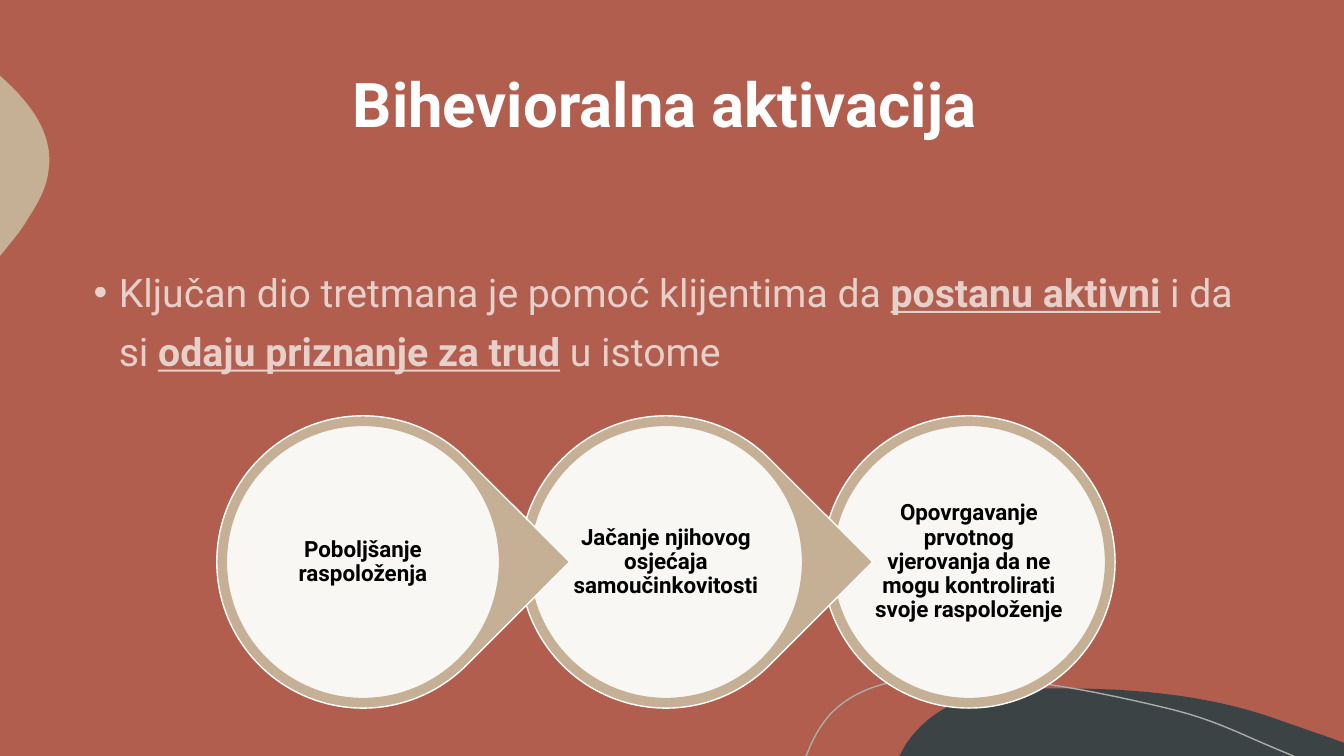
"""Build the behavioural activation slide with its chain of three outcomes."""
from dataclasses import dataclass

from lxml.etree import SubElement
from pptx import Presentation
from pptx.dml.color import RGBColor
from pptx.dml.fill import FillFormat
from pptx.enum.shapes import MSO_SHAPE as Preset
from pptx.enum.text import MSO_ANCHOR as Anchor, PP_ALIGN as Align
from pptx.oxml.ns import qn
from pptx.shapes.autoshape import Shape
from pptx.slide import Slide
from pptx.text.text import TextFrame, _Paragraph as Paragraph
from pptx.util import Inches, Pt

Point = tuple[float, float]

COLORS = {
    "clay": "B15E4E",
    "sand": "C5B096",
    "slate": "3B4345",
    "mist": "A9AEA7",
    "white": "FFFFFF",
    "black": "000000",
}
FONT = "Roboto"
RING_SIZE, DISC_SIZE, LABEL_SIZE = 2.9, 2.71, 1.94
FIRST_CENTER, LAST_CENTER = 3.6, 9.61
CENTER_Y = 4.22 + DISC_SIZE / 2


@dataclass(frozen=True)
class Outline:
    """A decorative outline whose segments hold one point or three Bezier points."""
    start: Point
    segments: list[tuple[Point, ...]]
    fill: str | None = None
    line: str | None = None


@dataclass(frozen=True)
class Outcome:
    """One link of the chain and the shape of its ring."""
    label: str
    ring: Preset
    rotation: float


@dataclass(frozen=True)
class Phrase:
    """A piece of the statement."""
    text: str
    stressed: bool = False


DECORATIONS = [
    Outline((10.54, 6.83), [
        ((11.28, 6.83), (12.04, 6.9), (12.73, 7.16)),
        ((12.86, 7.2), (12.98, 7.25), (13.11, 7.29)),
        ((13.33, 7.37),), ((13.33, 7.5),), ((8.92, 7.5),), ((8.98, 7.39),),
        ((9.02, 7.33), (9.06, 7.28), (9.11, 7.23)),
        ((9.39, 6.93), (9.82, 6.84), (10.23, 6.83)),
        ((10.33, 6.83), (10.43, 6.83), (10.54, 6.83)),
    ], fill="slate"),
    Outline((0, 0.75), [
        ((0.01, 0.76),),
        ((0.3, 1.02), (0.54, 1.33), (0.48, 1.7)),
        ((0.46, 1.87), (0.37, 2.03), (0.27, 2.18)),
        ((0.24, 2.24), (0.17, 2.33), (0.08, 2.44)),
        ((0, 2.54),),
    ], fill="sand"),
    Outline((7.99, 7.5), [
        ((8, 7.49),),
        ((8.06, 7.33), (8.14, 7.19), (8.24, 7.08)),
        ((8.5, 6.81), (8.89, 6.73), (9.26, 6.72)),
        ((9.55, 6.72),),
        ((10.22, 6.72), (11, 6.89), (11.55, 7.02)),
        ((12.09, 7.15), (12.26, 7.27), (12.83, 7.5)),
    ], line="mist"),
]
OUTCOMES = [
    Outcome("Poboljšanje raspoloženja", Preset.TEAR, 45),
    Outcome("Jačanje njihovog osjećaja samoučinkovitosti", Preset.TEAR, 45),
    Outcome("Opovrgavanje prvotnog vjerovanja da ne mogu kontrolirati svoje raspoloženje",
            Preset.OVAL, 0),
]
STATEMENT = [
    Phrase("Ključan dio tretmana je pomoć klijentima da "),
    Phrase("postanu aktivni", True),
    Phrase(" i da si "),
    Phrase("odaju priznanje za trud", True),
    Phrase(" u istome"),
]


def paint(fill: FillFormat, color: str, opacity: int = 100) -> None:
    """Apply a solid colour, translucent when opacity is below 100 percent."""
    fill.solid()
    fill.fore_color.rgb = RGBColor.from_string(COLORS[color])
    if opacity < 100:
        tint = fill._xPr.find(qn("a:solidFill"))[0]
        SubElement(tint, qn("a:alpha"), val=str(opacity * 1000))


def style(shape: Shape, fill: str | None, line: str | None, opacity: int = 100) -> None:
    """Set the fill and outline of a shape without a shadow."""
    shape.shadow.inherit = False
    if fill:
        paint(shape.fill, fill, opacity)
    else:
        shape.fill.background()
    if line:
        paint(shape.line.fill, line)
        shape.line.width = Pt(1)
    else:
        shape.line.fill.background()


def draw_decoration(slide: Slide, outline: Outline) -> None:
    """Draw one decorative outline, bending the segments that carry control points."""
    builder = slide.shapes.build_freeform(*map(Inches, outline.start))
    ends = [tuple(map(Inches, segment[-1])) for segment in outline.segments]
    builder.add_line_segments(ends, close=outline.fill is not None)
    shape = builder.convert_to_shape()
    steps = list(shape._element.iter(qn("a:lnTo")))
    for step, segment in zip(steps, outline.segments):
        if len(segment) == 3:
            curve = step.getparent().makeelement(qn("a:cubicBezTo"))
            for x, y in segment:
                SubElement(curve, qn("a:pt"), x=str(Inches(x) - shape.left),
                           y=str(Inches(y) - shape.top))
            step.getparent().replace(step, curve)
    style(shape, outline.fill, outline.line)


def add_text_area(slide: Slide, left: float, top: float, width: float, height: float,
                  anchor: Anchor) -> TextFrame:
    """Add a wrapping text box."""
    frame = slide.shapes.add_textbox(*map(Inches, (left, top, width, height))).text_frame
    frame.word_wrap = True
    frame.vertical_anchor = anchor
    return frame


def add_run(paragraph: Paragraph, text: str, size: float, color: str,
            bold: bool = True, underline: bool = False, opacity: int = 100) -> None:
    """Append one formatted run."""
    run = paragraph.add_run()
    run.text = text
    run.font.name, run.font.size = FONT, Pt(size)
    run.font.bold, run.font.underline = bold, underline
    paint(run.font.fill, color, opacity)


def add_centered(frame: TextFrame, text: str, size: float, color: str) -> None:
    """Write a centred bold paragraph."""
    paragraph = frame.paragraphs[0]
    paragraph.alignment, paragraph.line_spacing = Align.CENTER, 0.9
    add_run(paragraph, text, size, color)


def centered_square(center: float, size: float) -> tuple[float, float, float, float]:
    """Give the place of a square centred on the chain's axis."""
    return center - size / 2, CENTER_Y - size / 2, size, size


def draw_outcome(slide: Slide, outcome: Outcome, center: float) -> None:
    """Draw a ring, its pale disc and the label."""
    ring = slide.shapes.add_shape(
        outcome.ring, *map(Inches, centered_square(center, RING_SIZE)))
    ring.rotation = outcome.rotation
    style(ring, "sand", "white")
    disc = slide.shapes.add_shape(
        Preset.OVAL, *map(Inches, centered_square(center, DISC_SIZE)))
    style(disc, "white", "sand", opacity=90)
    label = add_text_area(slide, *centered_square(center, LABEL_SIZE), Anchor.MIDDLE)
    label.margin_left = label.margin_right = Inches(0.02)
    label.margin_top = label.margin_bottom = Inches(0.02)
    add_centered(label, outcome.label, 16, "black")


def draw_statement(slide: Slide) -> None:
    """Write the bulleted statement."""
    paragraph = add_text_area(slide, 0.83, 2.5, 11.67, 4.18, Anchor.TOP).paragraphs[0]
    paragraph.line_spacing = 1.25
    properties = paragraph._p.get_or_add_pPr()
    properties.set("marL", str(Inches(0.25)))
    properties.set("indent", str(Inches(-0.25)))
    SubElement(properties, qn("a:buFont"), typeface="Arial")
    SubElement(properties, qn("a:buChar"), char="•")
    for phrase in STATEMENT:
        add_run(paragraph, phrase.text, 28, "white", phrase.stressed, phrase.stressed, 70)


def main() -> None:
    """Build and save the presentation."""
    deck = Presentation()
    deck.slide_width, deck.slide_height = Inches(13.33), Inches(7.5)
    slide = deck.slides.add_slide(deck.slide_layouts[6])
    paint(slide.background.fill, "clay")
    for outline in DECORATIONS:
        draw_decoration(slide, outline)
    title = add_text_area(slide, 0.76, 0.23, 11.67, 1.67, Anchor.MIDDLE)
    add_centered(title, "Bihevioralna aktivacija", 44, "white")
    pitch = (LAST_CENTER - FIRST_CENTER) / (len(OUTCOMES) - 1)
    for index, outcome in reversed(list(enumerate(OUTCOMES))):
        draw_outcome(slide, outcome, FIRST_CENTER + index * pitch)
    draw_statement(slide)
    deck.save("out.pptx")


if __name__ == "__main__":
    main()
